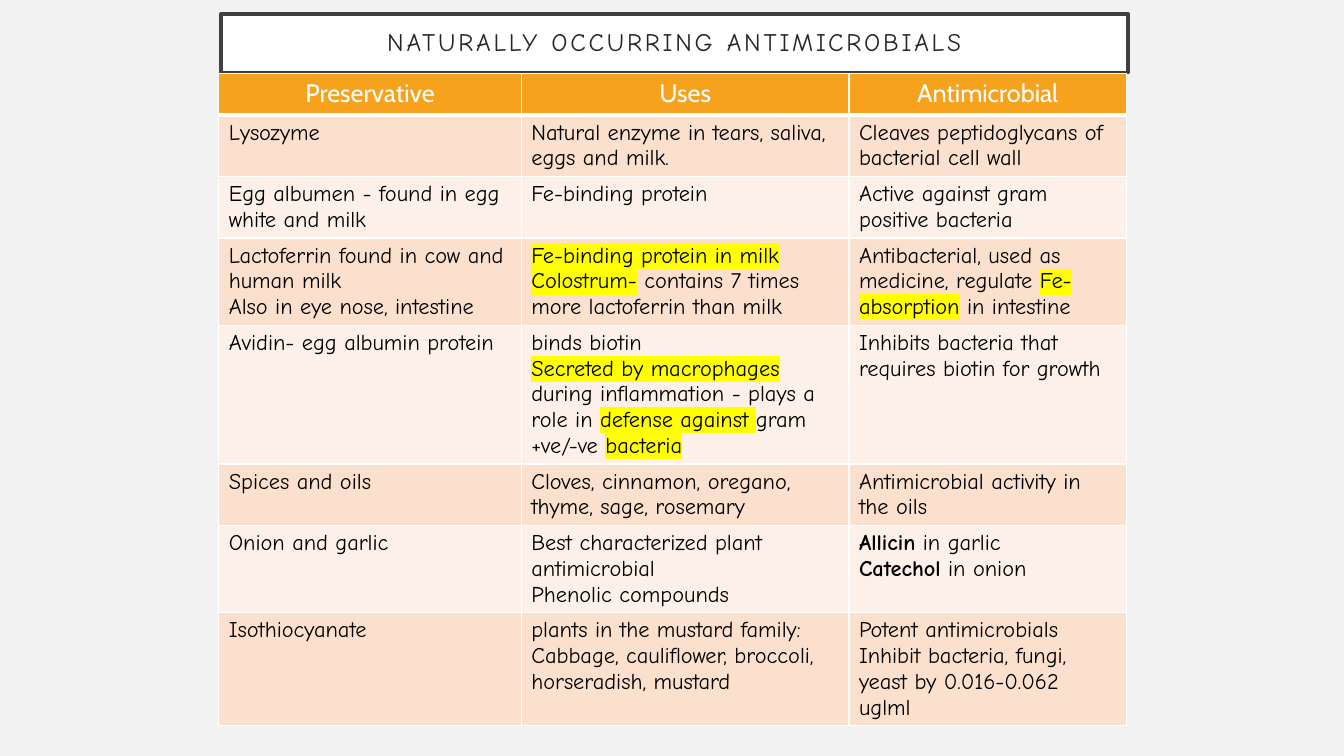
from dataclasses import dataclass

from lxml.etree import SubElement
from pptx import Presentation
from pptx.dml.color import RGBColor
from pptx.enum.text import MSO_ANCHOR, MSO_AUTO_SIZE, PP_ALIGN
from pptx.oxml.ns import qn
from pptx.util import Inches, Pt

TITLE_FONT = BODY_FONT = "Comic Neue"
HEADER_FONT = "Cabin"
WHITE, BLACK, YELLOW, ORANGE = "FFFFFF", "000000", "FFFF00", "F6A21D"
BANDS = ("FBE0CD", "FDF0E8")


@dataclass
class Span:
    text: str
    highlight: bool = False
    bold: bool = False


@dataclass
class Preservative:
    """Each column is a list of paragraphs, each paragraph a list of spans."""
    name: list[list[Span]]
    uses: list[list[Span]]
    action: list[list[Span]]


def lines(*texts: str) -> list[list[Span]]:
    return [[Span(text)] for text in texts]


def mark(text: str) -> Span:
    return Span(text, highlight=True)


def strong(text: str) -> Span:
    return Span(text, bold=True)


HEADINGS = ("Preservative", "Uses", "Antimicrobial")
COLUMN_WIDTHS = (3, 3.25, 2.75)
ROW_HEIGHT = 0.41

PRESERVATIVES = [
    Preservative(
        lines("Lysozyme"),
        lines("Natural enzyme in tears, saliva, eggs and milk."),
        lines("Cleaves peptidoglycans of bacterial cell wall")),
    Preservative(
        lines("Egg albumen - found in egg white and milk"),
        lines("Fe-binding protein"),
        lines("Active against gram positive bacteria")),
    Preservative(
        lines("Lactoferrin found in cow and human milk", "Also in eye nose, intestine"),
        [[mark("Fe-binding protein in milk")],
         [mark("Colostrum-"), Span(" contains 7 times more lactoferrin than milk")]],
        [[Span("Antibacterial, used as medicine, regulate "),
          mark("Fe- absorption"), Span(" in intestine")]]),
    Preservative(
        lines("Avidin- egg albumin protein"),
        [[Span("binds biotin")],
         [mark("Secreted by macrophages "),
          Span("during inflammation - plays a role in "),
          mark("defense against "), Span("gram +ve/-ve "), mark("bacteria")]],
        lines("Inhibits bacteria that requires biotin for growth")),
    Preservative(
        lines("Spices and oils"),
        lines("Cloves, cinnamon, oregano, thyme, sage, rosemary"),
        lines("Antimicrobial activity in the oils")),
    Preservative(
        lines("Onion and garlic"),
        lines("Best characterized plant antimicrobial", "Phenolic compounds"),
        [[strong("Allicin"), Span(" in garlic")],
         [strong("Catechol"), Span(" in onion")]]),
    Preservative(
        lines("Isothiocyanate"),
        lines("plants in the mustard family: Cabbage, cauliflower, broccoli, "
              "horseradish, mustard"),
        lines("Potent antimicrobials",
              "Inhibit bacteria, fungi, yeast by 0.016-0.062 uglml")),
]


def rgb(color: str) -> RGBColor:
    return RGBColor.from_string(color)


def paint(fill, color: str) -> None:
    fill.solid()
    fill.fore_color.rgb = rgb(color)


def add_span(p, span: Span, font: str, size: float, color: str):
    r = p.add_run()
    r.text = span.text
    r.font.name, r.font.size, r.font.bold = font, Pt(size), span.bold
    r.font.color.rgb = rgb(color)
    if span.highlight:
        # The highlight element must directly follow the text fill
        rPr = r.font._element
        highlight = SubElement(rPr, qn("a:highlight"))
        SubElement(highlight, qn("a:srgbClr"), val=YELLOW)
        rPr.find(qn("a:solidFill")).addnext(highlight)
    return r


def set_borders(cell, bottom: float) -> None:
    tcPr = cell._tc.get_or_add_tcPr()
    for side, width in (("L", 1), ("R", 1), ("T", 1), ("B", bottom)):
        ln = SubElement(tcPr, qn(f"a:ln{side}"), w=str(Pt(width)))
        SubElement(SubElement(ln, qn("a:solidFill")), qn("a:srgbClr"), val=WHITE)


def fill_cell(cell, paragraphs: list[list[Span]], fill: str, header: bool = False) -> None:
    font, size, color = (HEADER_FONT, 18, WHITE) if header else (BODY_FONT, 16, BLACK)
    set_borders(cell, 3 if header else 1)
    paint(cell.fill, fill)
    tf = cell.text_frame
    for i, spans in enumerate(paragraphs):
        p = tf.add_paragraph() if i else tf.paragraphs[0]
        p.alignment = PP_ALIGN.CENTER if header else PP_ALIGN.LEFT
        for span in spans:
            add_span(p, span, font, size, color)


def add_title(s) -> None:
    sp = s.shapes.title
    sp.left, sp.top, sp.width, sp.height = (Inches(v) for v in (2.19, 0.14, 9, 0.58))
    paint(sp.fill, WHITE)
    sp.line.color.rgb = rgb("404040")
    sp.line.width = Pt(2.5)
    tf = sp.text_frame
    tf.word_wrap = True
    tf.auto_size = MSO_AUTO_SIZE.NONE
    tf.vertical_anchor = MSO_ANCHOR.MIDDLE
    tf.margin_left = tf.margin_right = tf.margin_top = tf.margin_bottom = Inches(0.2)
    p = tf.paragraphs[0]
    p.alignment = PP_ALIGN.CENTER
    p.line_spacing = 0.9
    r = add_span(p, Span("NATURALLY OCCURRING ANTIMICROBIALS"), TITLE_FONT, 18, "262626")
    r.font._element.set("spc", "200")


def add_preservative_table(s) -> None:
    frame = s.shapes.add_table(len(PRESERVATIVES) + 1, len(HEADINGS),
                               Inches(2.17), Inches(0.73), Inches(9), Inches(6.71))
    table = frame.table
    for column, width in zip(table.columns, COLUMN_WIDTHS):
        column.width = Inches(width)
    for row in table.rows:
        row.height = Inches(ROW_HEIGHT)
    frame.height = Inches(6.71)

    for col, heading in enumerate(HEADINGS):
        fill_cell(table.cell(0, col), lines(heading), ORANGE, header=True)
    for i, item in enumerate(PRESERVATIVES):
        for col, paragraphs in enumerate((item.name, item.uses, item.action)):
            fill_cell(table.cell(i + 1, col), paragraphs, BANDS[i % 2])


def main() -> None:
    prs = Presentation()
    prs.slide_width, prs.slide_height = Inches(13.33), Inches(7.5)
    s = prs.slides.add_slide(prs.slide_layouts[5])
    paint(s.background.fill, "F2F2F2")
    add_title(s)
    add_preservative_table(s)
    prs.save("out.pptx")


if __name__ == "__main__":
    main()
